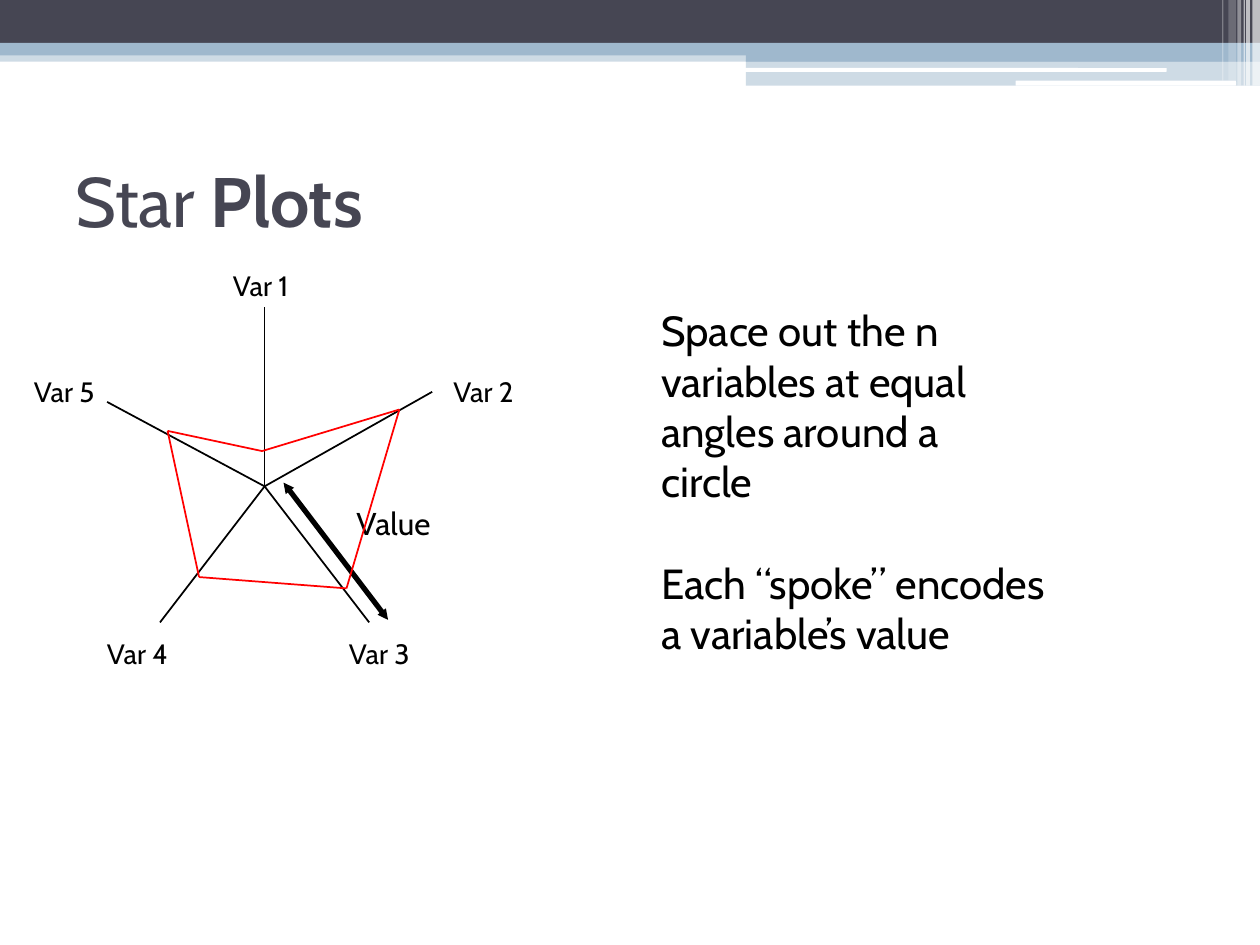
"""Builds the Star Plots slide: a five-spoke star plot beside a short explanation."""
from lxml import etree
from pptx import Presentation
from pptx.dml.color import RGBColor
from pptx.enum.shapes import MSO_CONNECTOR, MSO_SHAPE
from pptx.enum.text import MSO_ANCHOR, MSO_AUTO_SIZE, PP_ALIGN
from pptx.oxml.ns import qn
from pptx.util import Pt

RECT, ROUND = MSO_SHAPE.RECTANGLE, MSO_SHAPE.ROUNDED_RECTANGLE
STRAIGHT = MSO_CONNECTOR.STRAIGHT
LEFT, MIDDLE = PP_ALIGN.LEFT, MSO_ANCHOR.MIDDLE
FIT = MSO_AUTO_SIZE.SHAPE_TO_FIT_TEXT
PX = 9144
SLATE, BLUE, WHITE, BLACK, RED = "464653", "9FB8CD", "FFFFFF", "000000", "FF0000"

BANDS = [
    (RECT, (0, 40, 1000, 9), BLUE, 50),
    (RECT, (0, 0, 1000, 34), SLATE, 100),
    (RECT, (0, 34, 1000, 10), BLUE, 100),
    (RECT, (592, 39, 408, 10), BLUE, 100),
    (RECT, (592, 48, 408, 20), BLUE, 50),
    (ROUND, (591, 54, 335, 3), WHITE, 100),
    (ROUND, (806, 64, 175, 4), WHITE, 100),
]
STRIPES = [(994, 6, 68, 65), (989, 3, 68, 65), (987, 1, 68, 60),
           (982, 3, 68, 40), (975, 6, 64, 20), (970, 1, 64, 30)]
TITLE = [("Star ", False), ("Plots", True)]

HUB = (210, 386)
SPOKES = [
    {"label": "Var 1", "at": (175, 208), "tip": (210, 244), "value": (208, 358)},
    {"label": "Var 2", "at": (350, 292), "tip": (343, 311), "value": (317, 325)},
    {"label": "Var 3", "at": (267, 500), "tip": (293, 494), "value": (275, 467)},
    {"label": "Var 4", "at": (75, 500), "tip": (127, 494), "value": (158, 458)},
    {"label": "Var 5", "at": (17, 292), "tip": (85, 319), "value": (133, 342)},
]
ARROW = ((225, 383), (308, 492))
NOTES = [
    ["Space out the n", "variables at equal", "angles around a", "circle"],
    ["Each “spoke” encodes", "a variable’s value"],
]


def px(values):
    return [v * PX for v in values]


def rgb(value):
    return RGBColor.from_string(value)


def add_band(s, kind, box, color, opacity):
    sp = s.shapes.add_shape(kind, *px(box))
    sp.shadow.inherit = False
    sp.fill.solid()
    sp.fill.fore_color.rgb = rgb(color)
    sp.line.fill.background()
    if opacity < 100:
        clr = sp.fill._xPr.find(qn("a:solidFill"))[0]
        etree.SubElement(clr, qn("a:alpha"), val=str(opacity * 1000))


def add_line(s, start, end, color=BLACK, width=1, arrows=False):
    line = s.shapes.add_connector(STRAIGHT, *px(start + end))
    line.line.color.rgb = rgb(color)
    line.line.width = Pt(width)
    if arrows:
        ln = line.line._get_or_add_ln()
        for end_name in ("a:headEnd", "a:tailEnd"):
            etree.SubElement(ln, qn(end_name), type="triangle", w="sm", len="sm")
    etree.SubElement(line._element.spPr, qn("a:effectLst"))


def add_run(p, text, color=BLACK, **formats):
    r = p.add_run()
    r.text = text
    for name, value in {"name": "Cabin", **formats}.items():
        setattr(r.font, name, value)
    r.font.color.rgb = rgb(color)


def add_text(s, box, paragraphs, size):
    tf = s.shapes.add_textbox(*px(box)).text_frame
    tf.word_wrap, tf.auto_size = False, FIT
    for i, text in enumerate(paragraphs):
        p = tf.add_paragraph() if i else tf.paragraphs[0]
        add_run(p, text, size=Pt(size))
    return tf


def add_title(s):
    title = s.shapes.title
    title.left, title.top, title.width, title.height = px((50, 100, 900, 117))
    title.text_frame.vertical_anchor = MIDDLE
    p = title.text_frame.paragraphs[0]
    p.alignment = LEFT
    for text, bold in TITLE:
        add_run(p, text, SLATE, size=Pt(40), bold=bold)


def add_star(s):
    for spoke in SPOKES:
        add_line(s, HUB, spoke["tip"])
        add_text(s, spoke["at"] + (72, 37), [spoke["label"]], 16)
    add_line(s, *ARROW, width=3, arrows=True)
    add_text(s, (273, 395, 81, 40), ["Value"], 18)
    points = [spoke["value"] for spoke in SPOKES]
    for start, end in zip(points, points[1:] + points[:1]):
        add_line(s, start, end, RED)


def add_explanation(s):
    tf = add_text(s, (515, 237, 344, 290), sum(NOTES, []), 24)
    tf.paragraphs[len(NOTES[0])].space_before = Pt(29)


def main():
    prs = Presentation()
    prs.slide_width, prs.slide_height = px((1000, 750))
    s = prs.slides.add_slide(prs.slide_layouts[5])
    for band in BANDS:
        add_band(s, *band)
    for x, width, height, opacity in STRIPES:
        add_band(s, RECT, (x, 0, width, height), WHITE, opacity)
    add_title(s)
    add_star(s)
    add_explanation(s)
    prs.save("out.pptx")


if __name__ == "__main__":
    main()
